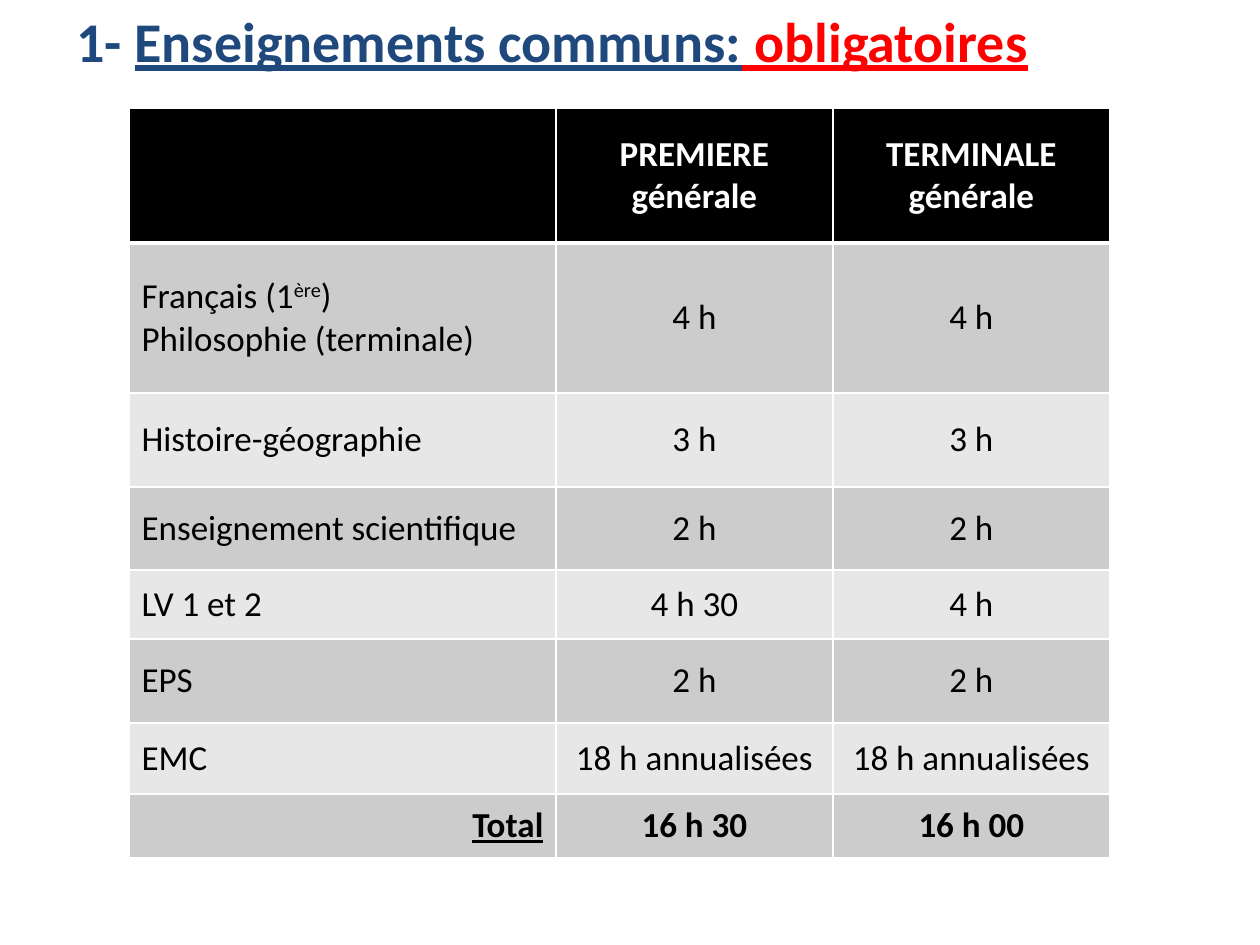
from dataclasses import dataclass

from lxml.etree import SubElement
from pptx import Presentation
from pptx.dml.color import RGBColor
from pptx.enum.text import MSO_ANCHOR, MSO_AUTO_SIZE, PP_ALIGN
from pptx.oxml.ns import qn
from pptx.util import Emu, Pt

FONT = "Calibri"
NAVY, RED = "1F497D", "FF0000"
BLACK, WHITE = "000000", "FFFFFF"
BANDS = ("CCCCCC", "E7E7E7")
COL_WIDTHS = (427, 277, 277)


@dataclass
class Row:
    label: str
    premiere: str
    terminale: str
    height: int


ROWS = [
    Row("", "PREMIERE\ngénérale", "TERMINALE\ngénérale", 135),
    Row("Français (1^ère^)\nPhilosophie (terminale)", "4 h", "4 h", 150),
    Row("Histoire-géographie", "3 h", "3 h", 94),
    Row("Enseignement scientifique", "2 h", "2 h", 83),
    Row("LV 1 et 2", "4 h 30", "4 h", 69),
    Row("EPS", "2 h", "2 h", 84),
    Row("EMC", "18 h annualisées", "18 h annualisées", 71),
    Row("Total", "16 h 30", "16 h 00", 64),
]


def px(n: int) -> Emu:
    return Emu(round(n * 914400 / 126))


def rgb(color: str) -> RGBColor:
    return RGBColor.from_string(color)


def add_text(p, text: str, *, size=20, color=BLACK, bold=False, underline=False) -> None:
    for i, part in enumerate(text.split("^")):
        r = p.add_run()
        r.text = part
        f = r.font
        f.name, f.size, f.bold, f.underline = FONT, Pt(size), bold, underline
        f.color.rgb = rgb(color)
        if i % 2:
            r._r.get_or_add_rPr().set("baseline", "30000")


def set_borders(cell, bottom: int, top: int) -> None:
    tcPr = cell._tc.get_or_add_tcPr()
    for side, width in (("L", 1), ("R", 1), ("T", top), ("B", bottom)):
        ln = SubElement(tcPr, qn(f"a:ln{side}"), w=str(Pt(width)))
        fill = SubElement(ln, qn("a:solidFill"))
        SubElement(fill, qn("a:srgbClr"), val=WHITE)


def fill_cell(cell, text: str, fill: str, align, top: int, bottom: int, **fmt) -> None:
    set_borders(cell, bottom, top)
    cell.fill.solid()
    cell.fill.fore_color.rgb = rgb(fill)
    cell.vertical_anchor = MSO_ANCHOR.MIDDLE
    if not text:
        return
    tf = cell.text_frame
    for i, line in enumerate(text.split("\n")):
        p = tf.add_paragraph() if i else tf.paragraphs[0]
        p.alignment = align
        add_text(p, line, **fmt)


def add_title(s) -> None:
    tf = s.shapes.add_textbox(px(64), px(0), px(1160), px(81)).text_frame
    tf.word_wrap = True
    tf.auto_size = MSO_AUTO_SIZE.SHAPE_TO_FIT_TEXT
    p = tf.paragraphs[0]
    add_text(p, "1- ", size=32, color=NAVY, bold=True)
    add_text(p, "Enseignements communs:", size=32, color=NAVY, bold=True, underline=True)
    add_text(p, " obligatoires", size=32, color=RED, bold=True, underline=True)


def add_hours_table(s) -> None:
    height = sum(row.height for row in ROWS)
    table = s.shapes.add_table(len(ROWS), len(COL_WIDTHS), px(129), px(108),
                               px(sum(COL_WIDTHS)), px(height)).table
    for col, width in zip(table.columns, COL_WIDTHS):
        col.width = px(width)
    for i, row in enumerate(ROWS):
        table.rows[i].height = px(row.height)
        header, total = i == 0, i == len(ROWS) - 1
        for j, text in enumerate((row.label, row.premiere, row.terminale)):
            label_align = PP_ALIGN.RIGHT if total else PP_ALIGN.LEFT
            fill_cell(table.cell(i, j), text,
                      BLACK if header else BANDS[(i - 1) % 2],
                      PP_ALIGN.CENTER if j else label_align,
                      top=3 if i == 1 else 1, bottom=3 if header else 1,
                      color=WHITE if header else BLACK,
                      bold=header or total, underline=total and j == 0)


def main() -> None:
    prs = Presentation()
    prs.slide_width, prs.slide_height = px(1260), px(945)
    s = prs.slides.add_slide(prs.slide_layouts[6])
    add_title(s)
    add_hours_table(s)
    prs.save("out.pptx")


if __name__ == "__main__":
    main()
